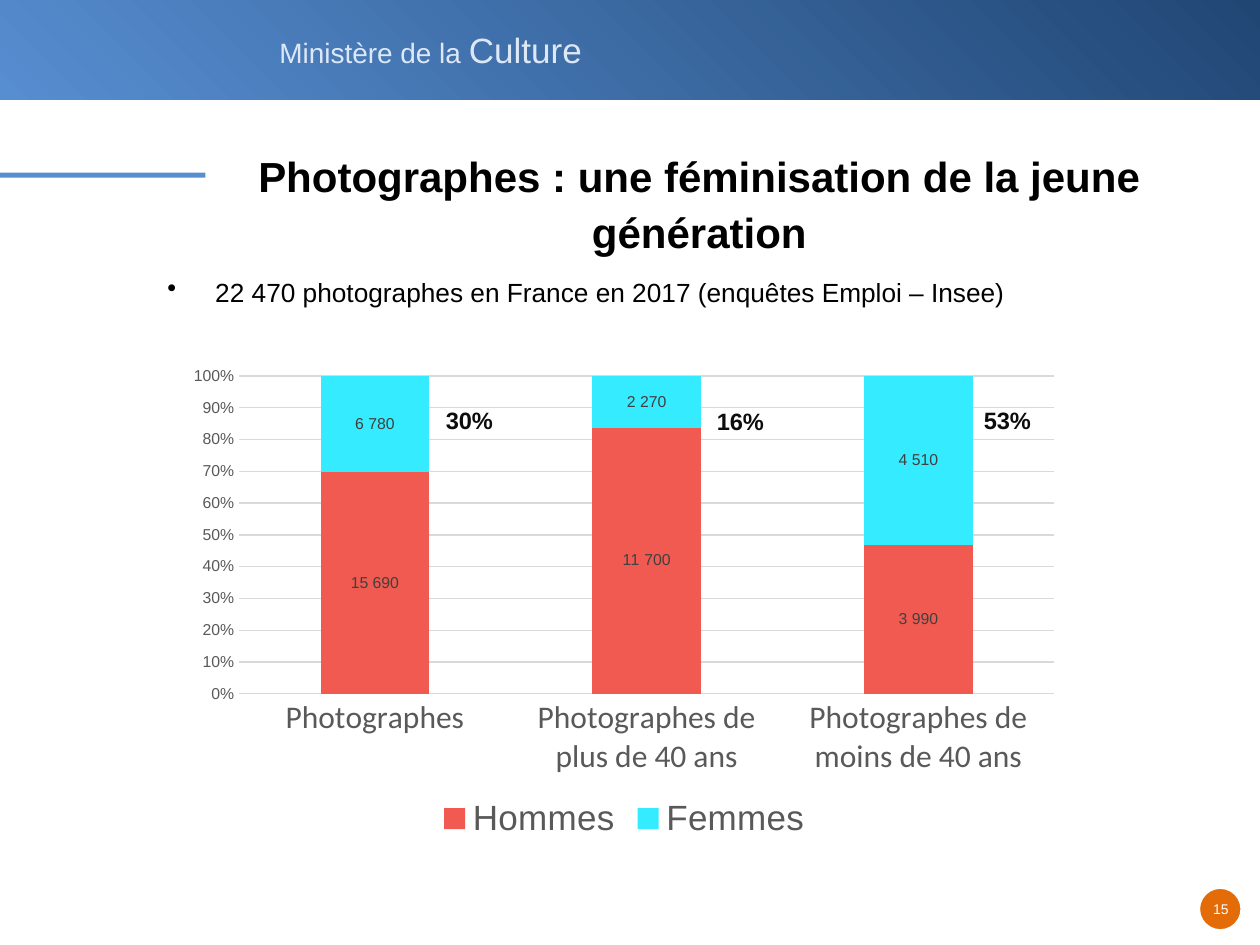
from lxml import etree
from pptx import Presentation
from pptx.chart.data import CategoryChartData
from pptx.dml.color import RGBColor
from pptx.enum.chart import XL_CHART_TYPE as ChartType, XL_LEGEND_POSITION as LegendPos
from pptx.enum.chart import XL_TICK_MARK as TickMark
from pptx.enum.shapes import MSO_SHAPE as Shape
from pptx.enum.text import MSO_ANCHOR as Anchor, MSO_AUTO_SIZE as AutoSize, PP_ALIGN as Align
from pptx.oxml import parse_xml
from pptx.oxml.ns import nsdecls, qn
from pptx.util import Inches, Pt

WIDTH, HEIGHT = Inches(10), Inches(7.5)
COLORS = {
    "navy": "204674", "blue": "578ED1", "pale": "DDE8F6", "orange": "E36C09",
    "white": "FFFFFF", "black": "000000", "ink": "0D0D0D", "label": "404040",
    "axis": "595959", "grid": "D9D9D9", "Hommes": "F05A50", "Femmes": "35EBFF",
}
CATEGORIES = ["Photographes", "Photographes de plus de 40 ans", "Photographes de moins de 40 ans"]
COUNTS = {"Hommes": [15690, 11700, 3990], "Femmes": [6780, 2270, 4510]}
SHARE_POSITIONS = [(34.4, 42.27), (55.9, 42.4), (77.1, 42.27)]
PLOT_AREA = {"x": 0.07, "y": 0.04, "w": 0.91, "h": 0.65}


def rgb(name):
    """Return the named colour."""
    return RGBColor.from_string(COLORS[name])


def area(left, top, width, height):
    """Turn percentages of the slide's size into lengths."""
    return [round(share * size / 100) for share, size in
            zip((left, top, width, height), (WIDTH, HEIGHT, WIDTH, HEIGHT))]


def style_font(font, size, color, name="Arial", bold=False):
    """Set the look of a font."""
    font.size, font.name, font.bold = Pt(size), name, bold
    font.color.rgb = rgb(color)


def add_block(slide, kind, place, fill=None, outline=None):
    """Add a preset shape, with a plain fill and an outline if named."""
    block = slide.shapes.add_shape(kind, *area(*place))
    block.shadow.inherit = False
    if fill:
        block.fill.solid()
        block.fill.fore_color.rgb = rgb(fill)
    if outline:
        block.line.color.rgb = rgb(outline)
        block.line.width = Pt(0.75)
    else:
        block.line.fill.background()
    return block


def add_text(slide, place, runs, color, bold=False, align=Align.LEFT, wrap=True, grow=True):
    """Add a one-paragraph text box from (text, size) runs."""
    frame = slide.shapes.add_textbox(*area(*place)).text_frame
    frame.word_wrap = wrap
    frame.auto_size = AutoSize.SHAPE_TO_FIT_TEXT if grow else AutoSize.NONE
    paragraph = frame.paragraphs[0]
    paragraph.alignment = align
    for text, size in runs:
        run = paragraph.add_run()
        run.text = text
        style_font(run.font, size, color, bold=bold)
    return frame


def add_banner(slide):
    """Add the gradient banner with the ministry's name."""
    banner = add_block(slide, Shape.RECTANGLE, (0, 0, 100, 10.53))
    banner.fill.gradient()
    banner.fill.gradient_angle = 225
    for stop, color in zip(banner.fill.gradient_stops, ("navy", "blue")):
        stop.color.rgb = rgb(color)
    add_text(slide, (21.2, 2.4, 26.3, 5.87), [("Ministère de la ", 16), ("Culture", 20)],
             "pale", wrap=False)


def add_title(slide, title):
    """Add the title and the rule to its left."""
    add_block(slide, Shape.RECTANGLE, (0, 18.27, 16.3, 0.53), "blue")
    frame = add_text(slide, (15.6, 14, 79.8, 14.53), [(title, 24)], "black",
                     bold=True, align=Align.CENTER, grow=False)
    frame.vertical_anchor = Anchor.MIDDLE
    frame.paragraphs[0].line_spacing = Pt(32)


def add_bullet(slide, text):
    """Add the bulleted statement."""
    frame = add_text(slide, (12.3, 28.53, 86.2, 47.6), [(text, 15)], "black", grow=False)
    properties = frame.paragraphs[0]._p.get_or_add_pPr()
    properties.set("marL", str(Inches(0.38)))
    properties.set("indent", str(Inches(-0.38)))
    etree.SubElement(properties, qn("a:buChar")).set("char", "•")


def add_page_number(slide, number):
    """Add the page number in its disc."""
    add_block(slide, Shape.OVAL, (95.2, 94, 3.3, 4.4), "orange", "white")
    frame = add_text(slide, (95.4, 94.67, 3, 3.07), [(number, 8)], "white",
                     align=Align.CENTER, wrap=False)
    frame.margin_left = frame.margin_right = Inches(0.05)


def style_axis(axis, size, font_name):
    """Set the text of an axis and remove its tick marks."""
    axis.major_tick_mark = axis.minor_tick_mark = TickMark.NONE
    style_font(axis.tick_labels.font, size, "axis", font_name)


def place_plot(chart):
    """Fix the inner plot area as shares of the chart."""
    sizes = "".join(f'<c:{key} val="{value}"/>' for key, value in PLOT_AREA.items())
    layout = parse_xml(
        f'<c:layout {nsdecls("c")}><c:manualLayout><c:layoutTarget val="inner"/>'
        f'<c:xMode val="edge"/><c:yMode val="edge"/>{sizes}</c:manualLayout></c:layout>')
    plot_area = chart._chartSpace.chart.plotArea
    for old in plot_area.findall(qn("c:layout")):
        plot_area.remove(old)
    plot_area.insert(0, layout)


def add_gender_chart(slide):
    """Add the stacked columns of men and women."""
    data = CategoryChartData()
    data.categories = CATEGORIES
    for gender, counts in COUNTS.items():
        data.add_series(gender, counts)
    chart = slide.shapes.add_chart(
        ChartType.COLUMN_STACKED_100, *area(14, 37.73, 71.1, 51.73), data).chart
    chart.has_title = False
    style_font(chart.font, 10, "black")
    place_plot(chart)

    plot = chart.plots[0]
    plot.gap_width, plot.overlap, plot.vary_by_categories = 150, 100, False
    for series in plot.series:
        series.format.fill.solid()
        series.format.fill.fore_color.rgb = rgb(series.name)
        labels = series.data_labels
        labels.show_value = True
        labels.number_format, labels.number_format_is_linked = "#\\ ##0", False
        style_font(labels.font, 9, "label")

    style_axis(chart.category_axis, 18, "Calibri")
    style_axis(chart.value_axis, 9, "Arial")
    tick_labels = chart.value_axis.tick_labels
    tick_labels.number_format, tick_labels.number_format_is_linked = "0%", False
    chart.value_axis.format.line.fill.background()
    for line in (chart.category_axis.format.line, chart.value_axis.major_gridlines.format.line):
        line.color.rgb = rgb("grid")
        line.width = Pt(0.75)

    chart.has_legend = True
    chart.legend.position = LegendPos.BOTTOM
    chart.legend.include_in_layout = False
    style_font(chart.legend.font, 20, "axis")


def add_women_shares(slide):
    """Write the share of women beside each column."""
    for (left, top), men, women in zip(SHARE_POSITIONS, *COUNTS.values()):
        add_text(slide, (left, top, 9.2, 4.4), [(f"{women / (men + women):.0%}", 13.5)],
                 "ink", bold=True)


def main():
    """Build the slide and save it."""
    deck = Presentation()
    deck.slide_width, deck.slide_height = WIDTH, HEIGHT
    slide = deck.slides.add_slide(deck.slide_layouts[6])
    add_banner(slide)
    add_page_number(slide, "15")
    add_title(slide, "Photographes : une féminisation de la jeune génération")
    add_bullet(slide, "22 470 photographes en France en 2017 (enquêtes Emploi – Insee)")
    add_gender_chart(slide)
    add_women_shares(slide)
    deck.save("out.pptx")


if __name__ == "__main__":
    main()
